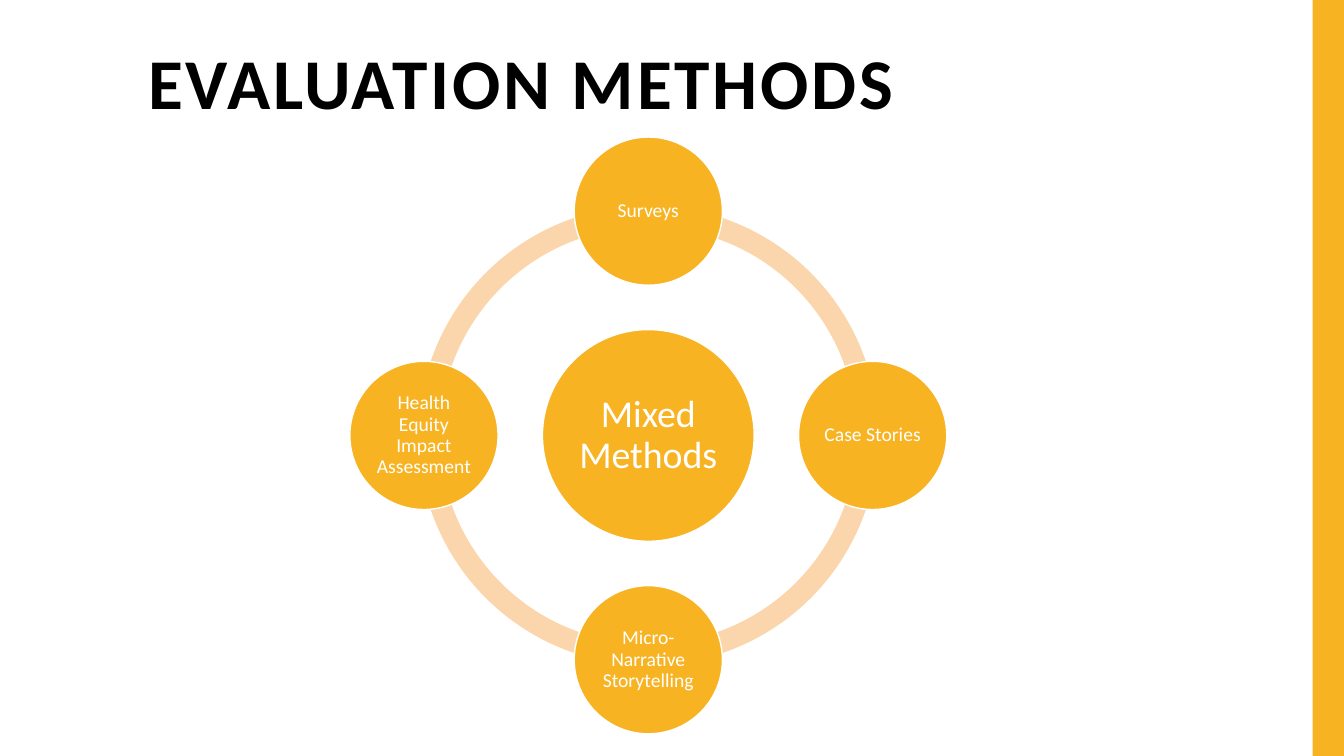
import math
from dataclasses import dataclass
from typing import Any

import pptx
import pptx.dml.color
import pptx.enum.shapes
import pptx.enum.text
import pptx.util

SHAPES = pptx.enum.shapes.MSO_SHAPE
ALIGN = pptx.enum.text.PP_ALIGN
ANCHOR = pptx.enum.text.MSO_ANCHOR
AUTO_SIZE = pptx.enum.text.MSO_AUTO_SIZE
WIDTH = pptx.util.Inches(13.33)
HEIGHT = pptx.util.Inches(7.5)


@dataclass(frozen=True)
class Theme:
    font: str = "Calibri"
    accent: str = "F8B323"
    ring: str = "FBD6AC"
    light: str = "FFFFFF"
    dark: str = "000000"
    title_size: int = 51
    hub_size: int = 27
    method_size: int = 14
    title_tracking: int = 200
    line_spacing: float = 0.9


@dataclass(frozen=True)
class Circle:
    text: str
    across: float
    down: float
    diameter: float
    size: int
    inset: float


THEME = Theme()
CENTRE_ACROSS, CENTRE_DOWN = 48.24, 57.6
RING_DIAMETER, HUB_DIAMETER, METHOD_DIAMETER = 60.8, 28, 19.6
ORBIT = 29.67
RING_THICKNESS = 0.05 * 0.93
QUARTER_TURN = 54
METHODS = [
    "Surveys",
    "Case Stories",
    "Micro-Narrative Storytelling",
    "Health Equity Impact Assessment",
]


def share_x(percent: float) -> int:
    return round(WIDTH * percent / 100)


def share_y(percent: float) -> int:
    return round(HEIGHT * percent / 100)


def colour(code: str) -> pptx.dml.color.RGBColor:
    return pptx.dml.color.RGBColor.from_string(code)


def apply(target: Any, values: dict[str, Any]) -> None:
    for name, value in values.items():
        setattr(target, name, value)


def paint(shape: Any, fill: str) -> None:
    shape.shadow.inherit = False
    shape.fill.solid()
    shape.fill.fore_color.rgb = colour(fill)
    shape.line.fill.background()


def write(shape: Any, text: str, size: int, ink: str, bold: bool,
          frame: dict[str, Any], align: Any) -> Any:
    apply(shape.text_frame, {"word_wrap": True, "auto_size": AUTO_SIZE.NONE, **frame})
    para = shape.text_frame.paragraphs[0]
    apply(para, {"alignment": align, "line_spacing": THEME.line_spacing})
    span = para.add_run()
    span.text = text
    apply(span.font, {"name": THEME.font, "size": pptx.util.Pt(size), "bold": bold})
    span.font.color.rgb = colour(ink)
    return span


def centred_square(across: float, down: float, diameter: float) -> tuple[int, int, int, int]:
    side = share_y(diameter)
    return share_x(across) - side // 2, share_y(down) - side // 2, side, side


def draw_title(page: Any, text: str) -> None:
    box = page.shapes.title
    apply(box, {"left": share_x(10.28), "top": share_y(5.6),
                "width": share_x(83.5), "height": share_y(21.73)})
    span = write(box, text, THEME.title_size, THEME.dark, True,
                 {"vertical_anchor": ANCHOR.TOP}, ALIGN.LEFT)
    span.font._element.set("spc", str(THEME.title_tracking))


def draw_side_bar(page: Any) -> None:
    left = share_x(97.67)
    bar = page.shapes.add_shape(SHAPES.RECTANGLE, left, 0, WIDTH - left, HEIGHT)
    paint(bar, THEME.accent)


def draw_ring(group: Any) -> None:
    bounds = centred_square(CENTRE_ACROSS, CENTRE_DOWN, RING_DIAMETER)
    for quarter in (2, 1, 0, 3):
        arc = group.shapes.add_shape(SHAPES.BLOCK_ARC, *bounds)
        arc.adjustments[0] = quarter * QUARTER_TURN
        arc.adjustments[1] = (quarter + 1) % 4 * QUARTER_TURN
        arc.adjustments[2] = RING_THICKNESS
        paint(arc, THEME.ring)


def draw_circle(group: Any, circle: Circle) -> None:
    bounds = centred_square(circle.across, circle.down, circle.diameter)
    disc = group.shapes.add_shape(SHAPES.OVAL, *bounds)
    paint(disc, THEME.accent)
    disc.line.color.rgb = colour(THEME.light)
    disc.line.width = pptx.util.Pt(1)
    inset = pptx.util.Inches(circle.inset)
    sides = ("margin_left", "margin_top", "margin_right", "margin_bottom")
    frame = {"vertical_anchor": ANCHOR.MIDDLE, **dict.fromkeys(sides, inset)}
    write(disc, circle.text, circle.size, THEME.light, False, frame, ALIGN.CENTER)


def method_circle(index: int, text: str) -> Circle:
    angle = math.tau * index / len(METHODS)
    across = CENTRE_ACROSS + ORBIT * math.sin(angle) * HEIGHT / WIDTH
    down = CENTRE_DOWN - ORBIT * math.cos(angle)
    return Circle(text, across, down, METHOD_DIAMETER, THEME.method_size, 0.02)


def main() -> None:
    deck = pptx.Presentation()
    apply(deck, {"slide_width": WIDTH, "slide_height": HEIGHT})
    page = deck.slides.add_slide(deck.slide_layouts.get_by_name("Title Only"))
    draw_side_bar(page)
    draw_title(page, "EVALUATION METHODS")
    diagram = page.shapes.add_group_shape()
    draw_ring(diagram)
    hub = Circle("Mixed Methods", CENTRE_ACROSS, CENTRE_DOWN,
                 HUB_DIAMETER, THEME.hub_size, 0.04)
    for circle in [hub, *(method_circle(i, text) for i, text in enumerate(METHODS))]:
        draw_circle(diagram, circle)
    deck.save("out.pptx")


if __name__ == "__main__":
    main()
